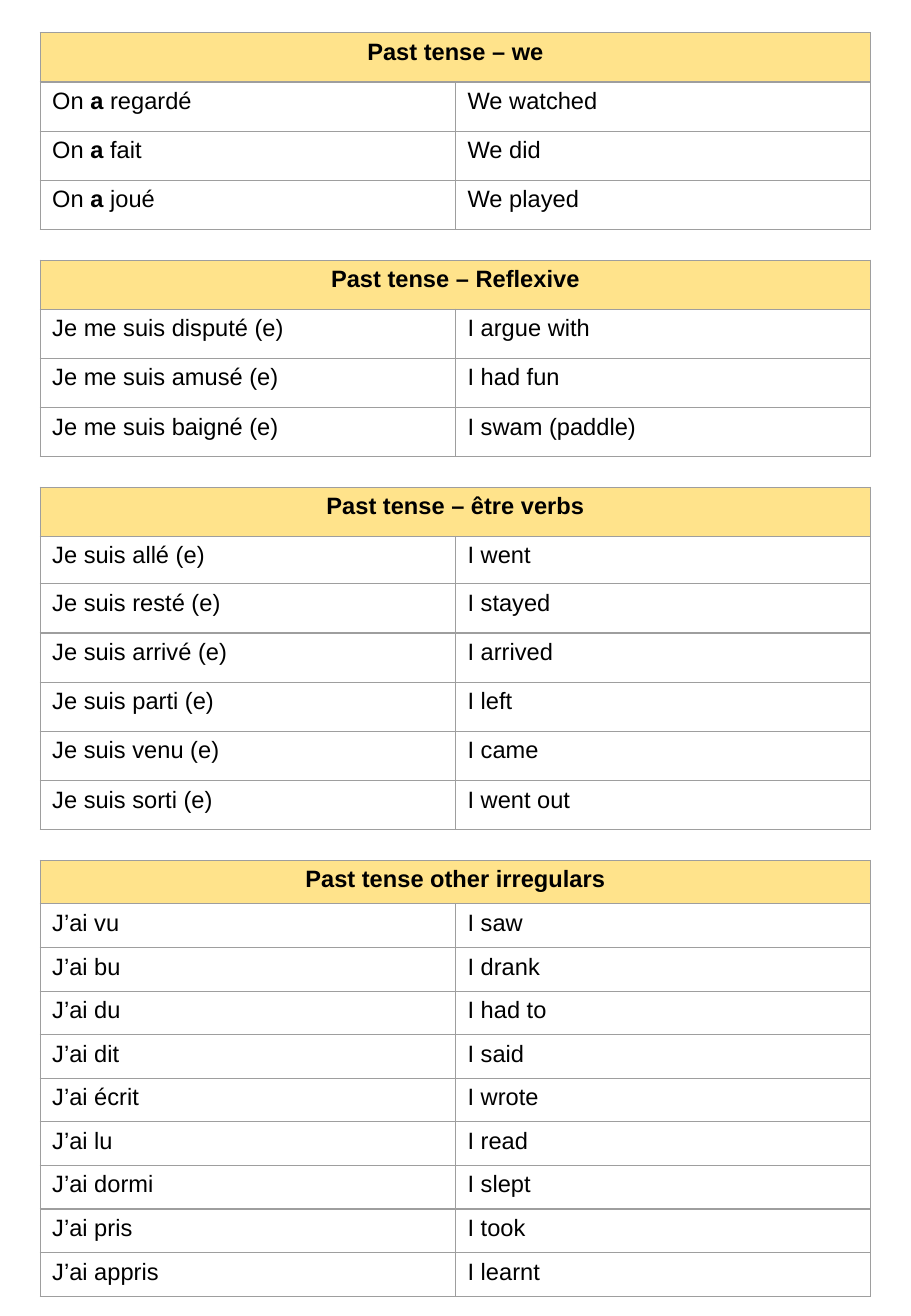
from dataclasses import dataclass
from typing import Optional

from lxml.etree import SubElement
from pptx import Presentation
from pptx.dml.color import RGBColor
from pptx.enum.text import PP_ALIGN as Align
from pptx.oxml.ns import qn
from pptx.util import Inches, Pt

BLACK = RGBColor(0x00, 0x00, 0x00)
HEADING_YELLOW = RGBColor(0xFF, 0xE3, 0x8B)
BORDER_GREY = RGBColor(0x9E, 0x9E, 0x9E)

LEFT, FIRST_TOP, GAP = 0.33, 0.27, 0.25
COLUMN_WIDTH = 3.42


@dataclass(frozen=True)
class VerbGroup:
    """A heading with French and English pairs; *asterisks* mark bold text."""
    heading: str
    height: float
    verbs: list[tuple[str, str]]
    first_verb_height: Optional[float] = None

    def row_heights(self) -> list[float]:
        count = len(self.verbs) + 1
        if self.first_verb_height is None:
            return [self.height / count] * count
        heights = [(self.height - self.first_verb_height) / (count - 1)] * count
        heights[1] = self.first_verb_height
        return heights


GROUPS = [
    VerbGroup("Past tense – we", 1.62, [
        ("On *a* regardé", "We watched"),
        ("On *a* fait", "We did"),
        ("On *a* joué", "We played"),
    ]),
    VerbGroup("Past tense – Reflexive", 1.62, [
        ("Je me suis disputé (e)", "I argue with"),
        ("Je me suis amusé (e)", "I had fun"),
        ("Je me suis baigné (e)", "I swam (paddle)"),
    ]),
    VerbGroup("Past tense – être verbs", 2.82, [
        ("Je suis allé (e)", "I went"),
        ("Je suis resté (e)", "I stayed"),
        ("Je suis arrivé (e)", "I arrived"),
        ("Je suis parti (e)", "I left"),
        ("Je suis venu (e)", "I came"),
        ("Je suis sorti (e)", "I went out"),
    ], first_verb_height=0.39),
    VerbGroup("Past tense other irregulars", 3.59, [
        ("J’ai vu", "I saw"),
        ("J’ai bu", "I drank"),
        ("J’ai du", "I had to"),
        ("J’ai dit", "I said"),
        ("J’ai écrit", "I wrote"),
        ("J’ai lu", "I read"),
        ("J’ai dormi", "I slept"),
        ("J’ai pris", "I took"),
        ("J’ai appris", "I learnt"),
    ]),
]


def write(cell, text: str, *, bold: bool = False, align: Align = Align.LEFT) -> None:
    paragraph = cell.text_frame.paragraphs[0]
    paragraph.alignment = align
    for index, part in enumerate(text.split("*")):
        run = paragraph.add_run()
        run.text = part
        run.font.name = "Arial"
        run.font.size = Pt(14)
        run.font.bold = bold or index % 2 == 1
        run.font.color.rgb = BLACK


def format_cell(cell, fill: Optional[RGBColor]) -> None:
    """Give the cell its four borders, then its fill, in schema order."""
    properties = cell._tc.get_or_add_tcPr()
    for side in ("a:lnL", "a:lnR", "a:lnT", "a:lnB"):
        line = SubElement(properties, qn(side), w=str(Pt(0.75)))
        solid = SubElement(line, qn("a:solidFill"))
        SubElement(solid, qn("a:srgbClr"), val=str(BORDER_GREY))
    if fill is None:
        cell.fill.background()
    else:
        cell.fill.solid()
        cell.fill.fore_color.rgb = fill


def add_verb_table(slide, group: VerbGroup, top: float) -> None:
    heights = group.row_heights()
    table = slide.shapes.add_table(
        len(heights), 2, Inches(LEFT), Inches(top),
        Inches(2 * COLUMN_WIDTH), Inches(group.height)).table
    table.first_row = table.horz_banding = False
    for column in table.columns:
        column.width = Inches(COLUMN_WIDTH)
    for index, (row, height) in enumerate(zip(table.rows, heights)):
        row.height = Inches(height)
        for cell in row.cells:
            format_cell(cell, HEADING_YELLOW if index == 0 else None)

    table.cell(0, 0).merge(table.cell(0, 1))
    write(table.cell(0, 0), group.heading, bold=True, align=Align.CENTER)
    for row_index, pair in enumerate(group.verbs, start=1):
        for column_index, text in enumerate(pair):
            write(table.cell(row_index, column_index), text)


def main() -> None:
    deck = Presentation()
    deck.slide_width, deck.slide_height = Inches(7.5), Inches(10.83)
    slide = deck.slides.add_slide(deck.slide_layouts.get_by_name("Blank"))
    top = FIRST_TOP
    for group in GROUPS:
        add_verb_table(slide, group, top)
        top += group.height + GAP
    deck.save("out.pptx")


if __name__ == "__main__":
    main()
